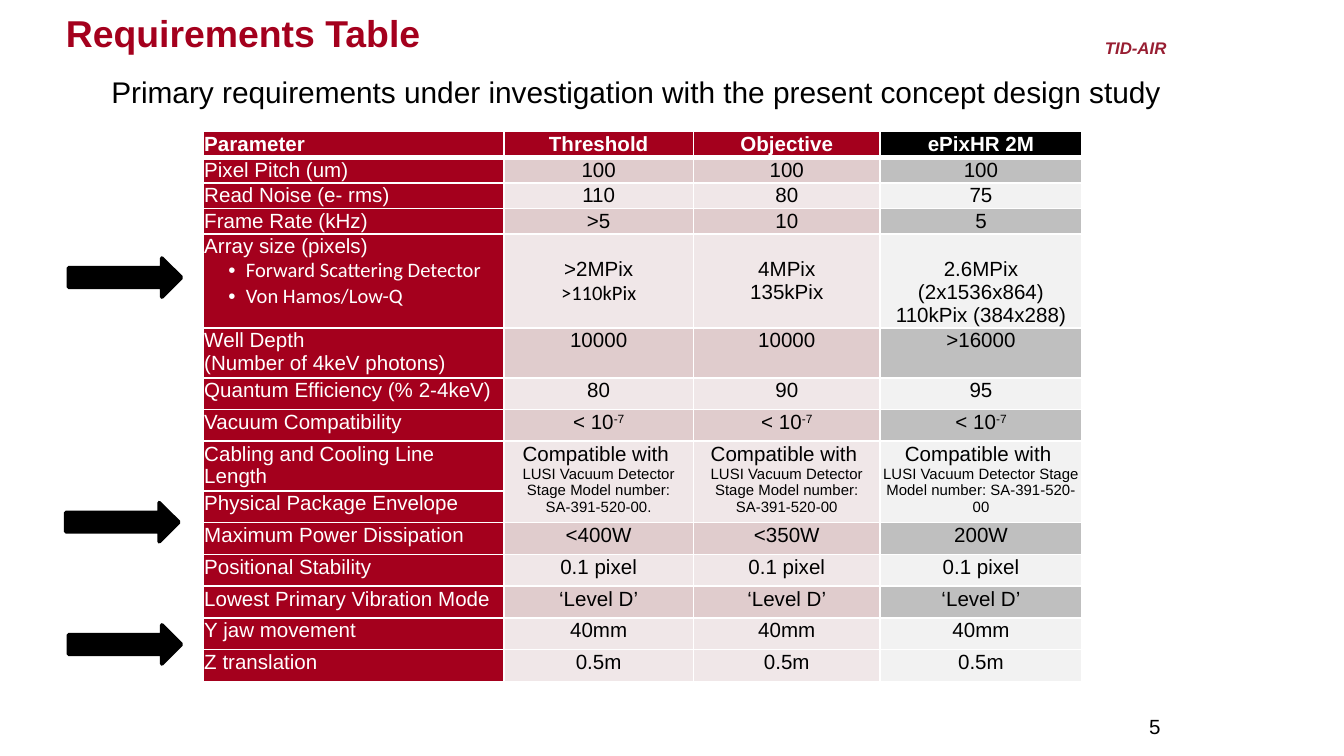
from dataclasses import dataclass

import pptx
import pptx.dml.color
import pptx.enum.shapes
import pptx.enum.text
import pptx.oxml.ns
import pptx.util
from lxml import etree

Inches = pptx.util.Inches
Pt = pptx.util.Pt
RGBColor = pptx.dml.color.RGBColor
ALIGN = pptx.enum.text.PP_ALIGN
ANCHOR = pptx.enum.text.MSO_ANCHOR
qn = pptx.oxml.ns.qn

BLACK = RGBColor(0, 0, 0)
WHITE = RGBColor(255, 255, 255)
CRIMSON = RGBColor(0xA4, 0x00, 0x1D)
GROUP_RED = RGBColor(0x98, 0x1E, 0x32)
PINK = RGBColor(0xE0, 0xCC, 0xCD)
PALE_PINK = RGBColor(0xF0, 0xE7, 0xE8)
GREY = RGBColor(0xBF, 0xBF, 0xBF)
PALE_GREY = RGBColor(0xF2, 0xF2, 0xF2)

SINGLE_ROW_HEIGHT = 1.89 / 8


@dataclass(frozen=True)
class Line:
    text: str
    size: float = 11
    font: str = "Arial"
    bullet: bool = False


@dataclass(frozen=True)
class Requirement:
    cells: tuple
    height: float = SINGLE_ROW_HEIGHT
    dark: bool = False
    value_top: float = 0.01


@dataclass(frozen=True)
class Label:
    text: str
    left: float
    top: float
    width: float
    height: float
    size: float
    color: RGBColor = BLACK
    bold: bool = False
    italic: bool = False
    align: int = ALIGN.LEFT
    anchor: int = ANCHOR.TOP
    margins: tuple = (0.1, 0.05, 0.1, 0.05)


def stage(number: str) -> tuple:
    return (Line("Compatible with "),
            Line(f"LUSI Vacuum Detector Stage Model number: {number}", 8))


LABELS = [
    Label("TID-AIR", 8.12, 0.23, 0.66, 0.19, 9, GROUP_RED, True, True, ALIGN.CENTER),
    Label("Requirements Table", 0.49, 0.03, 8.86, 0.38, 20, CRIMSON, True,
          anchor=ANCHOR.BOTTOM, margins=(0, 0, 0, 0)),
    Label("5", 8.49, 5.18, 0.26, 0.44, 11, anchor=ANCHOR.MIDDLE,
          margins=(0.06, 0.05, 0.06, 0.04)),
    Label("Primary requirements under investigation with the present concept design study",
          0.73, 0.5, 8.11, 0.37, 16),
]

COLUMN_WIDTHS = (2.24, 1.41, 1.39, 1.5)
REQUIREMENTS = [
    Requirement(("Parameter", "Threshold", "Objective", "ePixHR 2M"), 0.19),
    Requirement(("Pixel Pitch (um)", "100", "100", "100"), 0.19, True),
    Requirement(("Read Noise (e- rms)", "110", "80", "75"), 0.19),
    Requirement(("Frame Rate (kHz)", ">5", "10", "5"), 0.19, True),
    Requirement((
        (Line("Array size (pixels)"),
         Line("Forward Scattering Detector", font="Calibri", bullet=True),
         Line("Von Hamos/Low-Q", font="Calibri", bullet=True)),
        (Line(">2MPix"), Line(">110kPix", font="Calibri")),
        (Line("4MPix"), Line("135kPix")),
        (Line("2.6MPix (2x1536x864)"), Line("110kPix (384x288)")),
    ), 0.69, value_top=0.18),
    Requirement(((Line("Well Depth"), Line("(Number of 4keV photons)")),
                 "10000", "10000", ">16000"), 0.37, True),
    Requirement(("Quantum Efficiency (% 2-4keV)", "80", "90", "95")),
    Requirement(("Vacuum Compatibility", "< 10^-7", "< 10^-7", "< 10^-7"), dark=True),
    Requirement(("Cabling and Cooling Line Length", stage("SA-391-520-00."),
                 stage("SA-391-520-00"), stage("SA-391-520-00")), 0.37),
    Requirement(("Physical Package Envelope", (), (), ())),
    Requirement(("Maximum Power Dissipation", "<400W", "<350W", "200W"), dark=True),
    Requirement(("Positional Stability",) + ("0.1 pixel",) * 3),
    Requirement(("Lowest Primary Vibration Mode",) + ("‘Level D’",) * 3, dark=True),
    Requirement(("Y jaw movement",) + ("40mm",) * 3),
    Requirement(("Z translation",) + ("0.5m",) * 3),
]
MERGED_ROW = 8
ARROWS = ((0.51, 1.92), (0.49, 3.74), (0.51, 4.65))


def set_margins(target, left: float, top: float, right: float, bottom: float) -> None:
    target.margin_left, target.margin_top = Inches(left), Inches(top)
    target.margin_right, target.margin_bottom = Inches(right), Inches(bottom)


def set_font(font, name: str, size: float, color: RGBColor, bold: bool, italic: bool = False) -> None:
    font.name, font.size, font.bold, font.italic = name, Pt(size), bold, italic
    font.color.rgb = color


def draw_label(slide, label: Label) -> None:
    shape = slide.shapes.add_textbox(Inches(label.left), Inches(label.top),
                                     Inches(label.width), Inches(label.height))
    frame = shape.text_frame
    frame.word_wrap = False
    frame.vertical_anchor = label.anchor
    set_margins(frame, *label.margins)
    paragraph = frame.paragraphs[0]
    paragraph.text = label.text
    paragraph.alignment = label.align
    set_font(paragraph.font, "Arial", label.size, label.color, label.bold, label.italic)


def set_borders(cell, row: int) -> None:
    properties = cell._tc.get_or_add_tcPr()
    widths = {"lnL": 1, "lnR": 1, "lnT": 3 if row == 1 else 1, "lnB": 3 if row == 0 else 1}
    for side, width in widths.items():
        border = etree.SubElement(properties, qn(f"a:{side}"), w=str(Pt(width)))
        fill = etree.SubElement(border, qn("a:solidFill"))
        etree.SubElement(fill, qn("a:srgbClr"), val=str(WHITE))


def cell_fill(row: int, column: int, dark: bool) -> RGBColor:
    if row == 0 and column == 3:
        return BLACK
    if row == 0 or column == 0:
        return CRIMSON
    if column == 3:
        return GREY if dark else PALE_GREY
    return PINK if dark else PALE_PINK


def write_line(paragraph, line: Line, color: RGBColor, bold: bool, align: int) -> None:
    base, _, exponent = line.text.partition("^")
    paragraph.add_run().text = base
    if exponent:
        run = paragraph.add_run()
        run.text = exponent
        run._r.get_or_add_rPr().set("baseline", "30000")
    paragraph.alignment = align
    if line.bullet:
        properties = paragraph._p.get_or_add_pPr()
        properties.set("marL", str(Inches(0.31)))
        properties.set("indent", str(Inches(-0.13)))
        etree.SubElement(properties, qn("a:buFont"), typeface="Arial")
        etree.SubElement(properties, qn("a:buChar"), char="•")
    set_font(paragraph.font, line.font, line.size, color, bold)


def draw_cell(cell, requirement: Requirement, row: int, column: int) -> None:
    set_borders(cell, row)
    cell.fill.solid()
    cell.fill.fore_color.rgb = cell_fill(row, column, requirement.dark)
    set_margins(cell, 0.01, requirement.value_top if column else 0.01, 0.01, 0.01)
    content = requirement.cells[column]
    lines = (Line(content),) if isinstance(content, str) else content
    color = WHITE if row == 0 or column == 0 else BLACK
    align = ALIGN.CENTER if column else ALIGN.LEFT
    for index, line in enumerate(lines):
        frame = cell.text_frame
        paragraph = frame.add_paragraph() if index else frame.paragraphs[0]
        write_line(paragraph, line, color, row == 0, align)


def draw_table(slide) -> None:
    height = sum(requirement.height for requirement in REQUIREMENTS)
    table = slide.shapes.add_table(len(REQUIREMENTS), len(COLUMN_WIDTHS), Inches(1.51), Inches(0.98),
                                   Inches(sum(COLUMN_WIDTHS)), Inches(height)).table
    table.first_row = table.horz_banding = False
    for column, width in enumerate(COLUMN_WIDTHS):
        table.columns[column].width = Inches(width)
        if column:
            table.cell(MERGED_ROW, column).merge(table.cell(MERGED_ROW + 1, column))
    for row, requirement in enumerate(REQUIREMENTS):
        table.rows[row].height = Inches(requirement.height)
        for column in range(len(COLUMN_WIDTHS)):
            draw_cell(table.cell(row, column), requirement, row, column)


def draw_arrow(slide, left: float, top: float) -> None:
    shape = slide.shapes.add_shape(pptx.enum.shapes.MSO_SHAPE.RIGHT_ARROW, Inches(left), Inches(top),
                                   Inches(0.84), Inches(0.29))
    shape.shadow.inherit = False
    shape.fill.solid()
    shape.fill.fore_color.rgb = BLACK
    shape.line.color.rgb = BLACK
    shape.line.width = Pt(2)


def main() -> None:
    presentation = pptx.Presentation()
    presentation.slide_width = Inches(10)
    presentation.slide_height = Inches(10 * 9 / 16)
    slide = presentation.slides.add_slide(presentation.slide_layouts[6])
    draw_table(slide)
    for left, top in ARROWS:
        draw_arrow(slide, left, top)
    for label in LABELS:
        draw_label(slide, label)
    presentation.save("out.pptx")


if __name__ == "__main__":
    main()
